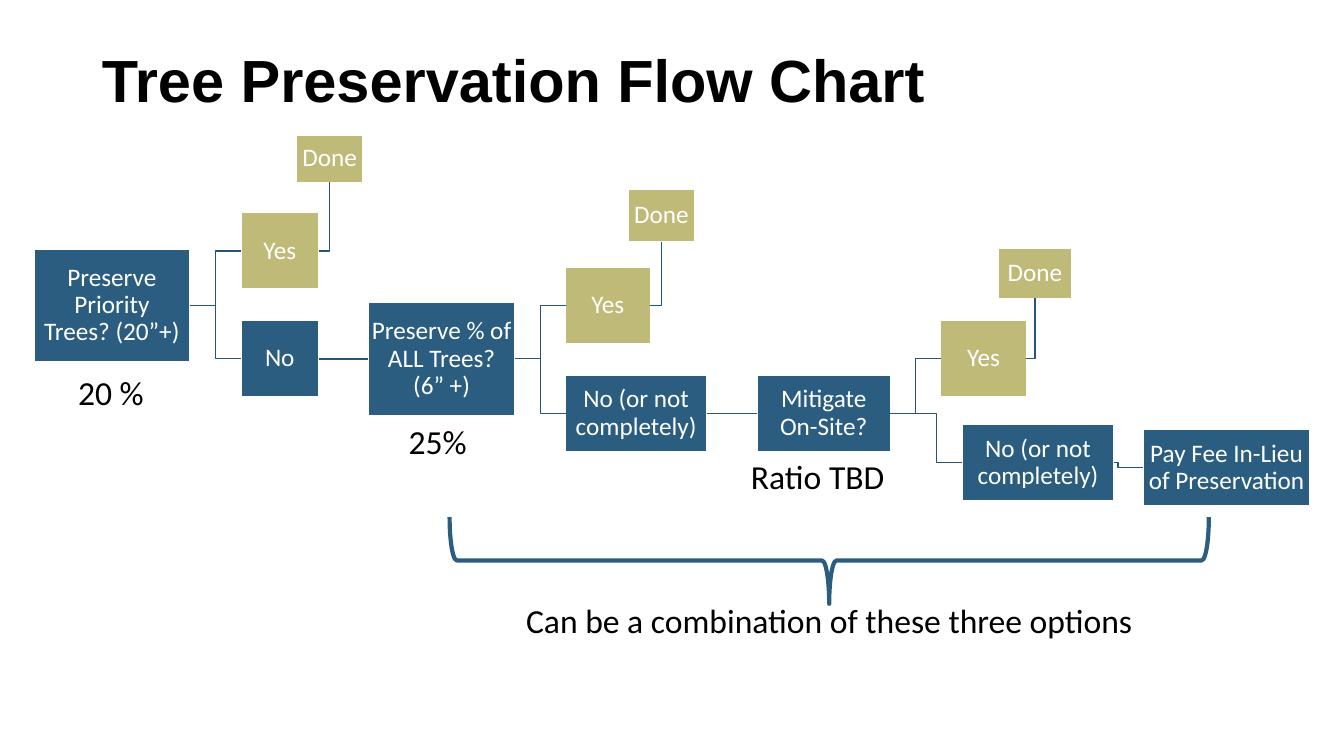
import pptx
import pptx.util
import pptx.dml.color
import pptx.enum.shapes
import pptx.enum.text
import lxml.etree

Inches = pptx.util.Inches
Pt = pptx.util.Pt
SHAPES = pptx.enum.shapes.MSO_SHAPE
ALIGN = pptx.enum.text.PP_ALIGN
ANCHOR = pptx.enum.text.MSO_ANCHOR
DRAWING = "http://schemas.openxmlformats.org/drawingml/2006/main"

COLORS = {"step": "2B5D80", "yes": "BFBA78", "link": "275474",
          "white": "FFFFFF", "black": "000000"}
TITLE = {"name": "Arial", "size": Pt(42.5), "bold": True}
STEP = {"name": "Calibri", "size": Pt(18)}
CAPTION = {"name": "Calibri", "size": Pt(24)}
BEND = Inches(0.25)  # distance from a link's bend to the box it enters

# Boxes: name, text, fill, left, top, width, height within the flow area
BOXES = [
    ("priority", "Preserve\vPriority\vTrees? (20”+)", "step", 0, 1.13, 1.54, 1.12),
    ("priority yes", "Yes", "yes", 2.05, 0.77, 0.77, 0.76),
    ("priority done", "Done", "yes", 2.6, 0, 0.66, 0.47),
    ("priority no", "No", "step", 2.05, 1.84, 0.77, 0.76),
    ("all", "Preserve % of ALL Trees?\v(6” +)", "step", 3.31, 1.66, 1.46, 1.12),
    ("all yes", "Yes", "yes", 5.27, 1.31, 0.84, 0.76),
    ("all done", "Done", "yes", 5.89, 0.54, 0.66, 0.52),
    ("all no", "No (or not completely)", "step", 5.27, 2.38, 1.4, 0.76),
    ("mitigate", "Mitigate\vOn-Site?", "step", 7.17, 2.38, 1.32, 0.76),
    ("mitigate yes", "Yes", "yes", 8.99, 1.84, 0.85, 0.76),
    ("mitigate done", "Done", "yes", 9.56, 1.12, 0.73, 0.5),
    ("mitigate no", "No (or not completely)", "step", 9.2, 2.87, 1.51, 0.76),
    ("fee", "Pay Fee In-Lieu of Preservation", "step", 11, 2.92, 1.65, 0.76),
]
STRAIGHT = [("priority no", "all"), ("all no", "mitigate")]
BRANCHES = [("priority", "priority yes"), ("priority", "priority no"),
            ("all", "all yes"), ("all", "all no"),
            ("mitigate", "mitigate yes"), ("mitigate", "mitigate no"),
            ("mitigate no", "fee")]
CAPTIONS = [("20 %", -0.04, 2.3), ("25%", 3.2, 2.79), ("Ratio TBD", 6.97, 3.13)]


def rgb(name):
    return pptx.dml.color.RGBColor.from_string(COLORS[name])


def write(shape, text, font_format, color, align=ALIGN.CENTER, spacing=None):
    frame = shape.text_frame
    frame.word_wrap = True
    frame.text = text
    paragraph = frame.paragraphs[0]
    paragraph.alignment = align
    paragraph.line_spacing = spacing
    for attribute, value in font_format.items():
        setattr(paragraph.font, attribute, value)
    paragraph.font.color.rgb = rgb(color)


def style_line(shape, color, width):
    shape.line.color.rgb = rgb(color)
    shape.line.width = Pt(width)


def add_title(slide, left, top, width, height):
    title = slide.shapes.title
    title.left, title.top, title.width, title.height = left, top, width, height
    write(title, "Tree Preservation Flow Chart", TITLE, "black", ALIGN.LEFT, 0.7)
    title.text_frame.vertical_anchor = ANCHOR.MIDDLE


def add_caption(slide, text, left, top, width):
    caption = slide.shapes.add_textbox(left, top, width, Inches(0.5))
    write(caption, text, CAPTION, "black")


def add_box(slide, text, fill, left, top, width, height):
    box = slide.shapes.add_shape(SHAPES.RECTANGLE, left, top, width, height)
    box.shadow.inherit = False
    box.fill.solid()
    box.fill.fore_color.rgb = rgb(fill)
    style_line(box, "white", 1)
    frame = box.text_frame
    frame.vertical_anchor = ANCHOR.MIDDLE
    for side in ("left", "top", "right", "bottom"):
        setattr(frame, f"margin_{side}", Inches(0.01))
    write(box, text, STEP, "white", spacing=0.9)
    return box


def middle(box):
    return box.top + box.height // 2


def add_bent_link(slide, points):
    builder = slide.shapes.build_freeform(*points[0])
    builder.add_line_segments(points[1:], close=False)
    link = builder.convert_to_shape()
    link.shadow.inherit = False
    link.fill.background()
    style_line(link, "link", 1)


def add_flow(slide, left, top):
    # Boxes
    boxes = {}
    for name, text, fill, x, y, width, height in BOXES:
        boxes[name] = add_box(slide, text, fill, left + Inches(x), top + Inches(y),
                              Inches(width), Inches(height))

    # Straight links
    for source, target in STRAIGHT:
        link = slide.shapes.add_connector(
            pptx.enum.shapes.MSO_CONNECTOR.STRAIGHT, 0, 0, 0, 0)
        link.begin_connect(boxes[source], 3)
        link.end_connect(boxes[target], 1)
        style_line(link, "link", 1)
        lxml.etree.SubElement(link._element.spPr, f"{{{DRAWING}}}effectLst")

    # Branches to the next boxes on the right
    for source, target in BRANCHES:
        start, end = boxes[source], boxes[target]
        bend = end.left - BEND
        add_bent_link(slide, [(start.left + start.width, middle(start)),
                              (bend, middle(start)), (bend, middle(end)),
                              (end.left, middle(end))])

    # Links from each Yes up to its Done
    for question in ("priority", "all", "mitigate"):
        yes, done = boxes[f"{question} yes"], boxes[f"{question} done"]
        center = done.left + done.width // 2
        add_bent_link(slide, [(yes.left + yes.width, middle(yes)),
                              (center, middle(yes)),
                              (center, done.top + done.height)])

    # Captions under the questions
    for text, x, y in CAPTIONS:
        add_caption(slide, text, left + Inches(x), top + Inches(y), Inches(1.6))


def add_summary(slide, left, top, width, height):
    # The brace is upright before its quarter turn, so its sides are swapped
    brace = slide.shapes.add_shape(
        SHAPES.LEFT_BRACE, left + (width - height) // 2,
        top + (height - width) // 2, height, width)
    brace.rotation = 270
    brace.shadow.inherit = False
    brace.fill.background()
    style_line(brace, "step", 3)
    add_caption(slide, "Can be a combination of these three options",
                left, top + height - Inches(0.09), width)


def main():
    presentation = pptx.Presentation()
    presentation.slide_width = Inches(13.33)
    presentation.slide_height = Inches(7.5)
    slide = presentation.slides.add_slide(presentation.slide_layouts[5])
    add_title(slide, Inches(0.91), Inches(0.54), Inches(11.5), Inches(0.65))
    add_flow(slide, Inches(0.34), Inches(1.34))
    add_summary(slide, Inches(4.46), Inches(5.13), Inches(7.53), Inches(0.86))
    presentation.save("out.pptx")


if __name__ == "__main__":
    main()
